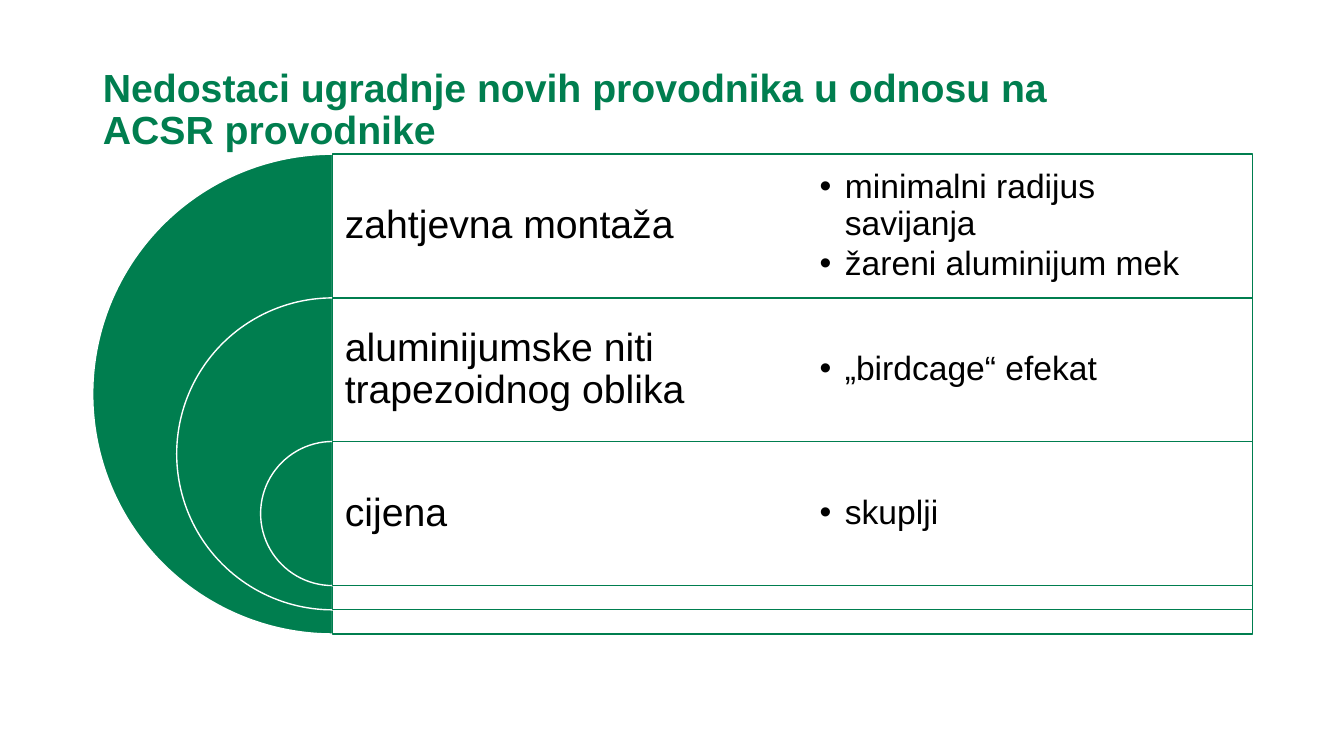
from pptx import Presentation
from pptx.dml.color import RGBColor
from pptx.enum.shapes import MSO_SHAPE
from pptx.enum.text import MSO_ANCHOR, MSO_AUTO_SIZE, PP_ALIGN
from pptx.oxml.ns import qn
from pptx.util import Inches, Pt
from lxml.etree import SubElement

TITLE = "Nedostaci ugradnje novih provodnika u odnosu na ACSR provodnike"
DRAWBACKS = [
    ("zahtjevna montaža", ["minimalni radijus savijanja", "žareni aluminijum mek"]),
    ("aluminijumske niti trapezoidnog oblika", ["„birdcage“ efekat"]),
    ("cijena", ["skuplji"]),
]
THEME = {
    "font": "Arial",
    "green": RGBColor.from_string("007E4F"),
    "white": RGBColor.from_string("FFFFFF"),
    "black": RGBColor.from_string("000000"),
    "heading": 28,
    "detail": 24,
}

TOP, AXIS = 1.53, 3.3
ROW_HEIGHT, COLUMN_WIDTH = 1.43, 4.56
ROW_STEP = 1.425
OUTER_DIAMETER, DIAMETER_STEP = 4.76, 1.665
BULLET_INDENT = 0.25


def write_text(frame, lines, size, color, bold=False, inset=0.1, bullet=False):
    frame.word_wrap = True
    frame.auto_size = MSO_AUTO_SIZE.NONE
    frame.vertical_anchor = MSO_ANCHOR.MIDDLE
    frame.margin_left = frame.margin_right = Inches(inset)
    frame.margin_top = frame.margin_bottom = Inches(0.05 if inset == 0.1 else inset)
    for index, line in enumerate(lines):
        paragraph = frame.add_paragraph() if index else frame.paragraphs[0]
        paragraph.alignment = PP_ALIGN.LEFT
        paragraph.line_spacing = 0.9
        if index:
            paragraph.space_before = Pt(3)
        if bullet:
            properties = paragraph._p.get_or_add_pPr()
            properties.set("marL", str(Inches(BULLET_INDENT)))
            properties.set("indent", str(-Inches(BULLET_INDENT)))
            SubElement(properties, qn("a:buFont"), typeface=THEME["font"])
            SubElement(properties, qn("a:buChar"), char="•")
        run = paragraph.add_run()
        run.text = line
        run.font.name = THEME["font"]
        run.font.size = Pt(size)
        run.font.bold = bold
        run.font.color.rgb = color


def add_panel(slide, preset, left, top, width, height, fill, line):
    panel = slide.shapes.add_shape(
        preset, Inches(left), Inches(top), Inches(width), Inches(height))
    panel.shadow.inherit = False
    panel.fill.solid()
    panel.fill.fore_color.rgb = fill
    panel.line.color.rgb = line
    panel.line.width = Pt(1)
    return panel


def add_cell(slide, column, top, lines, **text_format):
    cell = slide.shapes.add_textbox(
        Inches(AXIS + column * COLUMN_WIDTH), Inches(top),
        Inches(COLUMN_WIDTH), Inches(ROW_HEIGHT))
    write_text(cell.text_frame, lines, color=THEME["black"], **text_format)


def main():
    presentation = Presentation()
    presentation.slide_width, presentation.slide_height = Inches(13.33), Inches(7.5)
    slide = presentation.slides.add_slide(presentation.slide_layouts[5])

    title = slide.shapes.title
    title.left, title.top = Inches(0.92), Inches(0.69)
    title.width, title.height = Inches(10.15), Inches(0.82)
    write_text(title.text_frame, [TITLE], THEME["heading"], THEME["green"], bold=True)

    for row, (drawback, details) in enumerate(DRAWBACKS):
        top = TOP + row * ROW_STEP
        diameter = OUTER_DIAMETER - row * DIAMETER_STEP
        half_disc = add_panel(slide, MSO_SHAPE.PIE, AXIS - diameter / 2, top,
                              diameter, diameter, THEME["green"], THEME["white"])
        half_disc.adjustments[0], half_disc.adjustments[1] = 54, 162
        band = add_panel(slide, MSO_SHAPE.RECTANGLE, AXIS, top,
                         2 * COLUMN_WIDTH, diameter, THEME["white"], THEME["green"])
        band_color = band.fill._xPr.find(qn("a:solidFill"))[0]
        SubElement(band_color, qn("a:alpha"), val="90000")
        add_cell(slide, 0, top, [drawback], size=THEME["heading"], inset=0.12)
        add_cell(slide, 1, top, details, size=THEME["detail"], inset=0.27, bullet=True)

    presentation.save("out.pptx")


if __name__ == "__main__":
    main()
